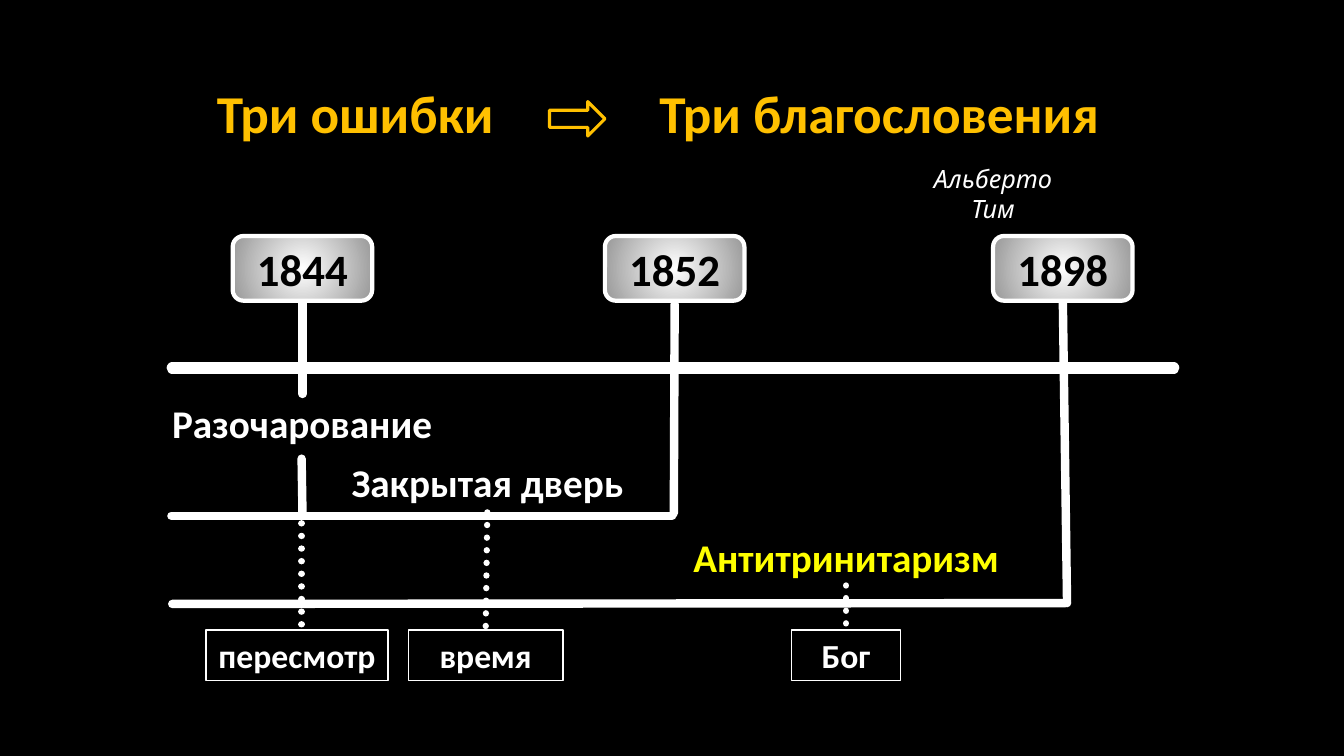
from lxml import etree
from pptx import Presentation
from pptx.dml.color import RGBColor
from pptx.enum.dml import MSO_LINE
from pptx.enum.shapes import MSO_CONNECTOR, MSO_SHAPE
from pptx.enum.text import MSO_ANCHOR, MSO_AUTO_SIZE, PP_ALIGN
from pptx.oxml.ns import qn
from pptx.util import Inches, Pt

CENTER, LEFT = PP_ALIGN.CENTER, PP_ALIGN.LEFT
TOP, MIDDLE = MSO_ANCHOR.TOP, MSO_ANCHOR.MIDDLE
GROW, FIXED = MSO_AUTO_SIZE.SHAPE_TO_FIT_TEXT, MSO_AUTO_SIZE.NONE
STRAIGHT, DOTTED = MSO_CONNECTOR.STRAIGHT, MSO_LINE.ROUND_DOT
RECT, ROUNDED, ARROW = MSO_SHAPE.RECTANGLE, MSO_SHAPE.ROUNDED_RECTANGLE, MSO_SHAPE.RIGHT_ARROW

COLORS = {name: RGBColor.from_string(value) for name, value in {
    "black": "000000", "white": "FFFFFF", "gold": "FFC000",
    "yellow": "FFFF00", "gray": "979797"}.items()}

HEADING = {"name": "Calibri", "size": Pt(38), "bold": True}
BYLINE = {"name": "Noto Sans", "size": Pt(18), "italic": True}
ERROR = {"name": "Calibri", "size": Pt(28), "bold": True}
TOPIC = {"name": "Calibri", "size": Pt(24), "bold": True}
YEAR = {"name": "Calibri", "size": Pt(32), "bold": True}

prs = Presentation()
prs.slide_width, prs.slide_height = Inches(13.33), Inches(7.5)
CELL = prs.slide_height / 90  # the slide is a grid of 160 columns by 90 rows
slide = prs.slides.add_slide(prs.slide_layouts[5])
slide.background.fill.solid()
slide.background.fill.fore_color.rgb = COLORS["black"]
shapes = slide.shapes


def grid(*cells):
    return [round(cell * CELL) for cell in cells]


def write(shape, text, font_format, color, align=CENTER, wrap=False, anchor=TOP, fit=GROW):
    frame = shape.text_frame
    frame.text = text
    frame.word_wrap, frame.vertical_anchor, frame.auto_size = wrap, anchor, fit
    paragraph = frame.paragraphs[0]
    paragraph.alignment = align
    font = paragraph.runs[0].font
    for attribute, value in font_format.items():
        setattr(font, attribute, value)
    font.color.rgb = COLORS[color]


# Heading: errors lead to blessings
errors = shapes.title
errors.left, errors.top, errors.width, errors.height = grid(24.5, 9, 35.6, 8.9)
write(errors, "Три ошибки", HEADING, "gold")

arrow = shapes.add_shape(ARROW, *grid(65.4, 12.1, 6.6, 4.1))
arrow.shadow.inherit = False
arrow.fill.solid()
arrow.fill.fore_color.rgb = COLORS["black"]
arrow.line.color.rgb = COLORS["gold"]
arrow.line.width = Pt(2.25)

blessings = shapes.add_textbox(*grid(77.3, 9, 55.2, 8.9))
write(blessings, "Три благословения", HEADING, "gold", align=LEFT)

byline = shapes.add_textbox(*grid(107.4, 18.8, 21.6, 4.8))
write(byline, "Альберто Тим", BYLINE, "white", wrap=True)

# Names of the three errors
for text, left, top, width, color in [
    ("Разочарование", 16.7, 47, 38.5, "white"),
    ("Закрытая дверь", 40.4, 54, 35.2, "white"),
    ("Антитринитаризм", 81.1, 62.9, 39.2, "yellow"),
]:
    error = shapes.add_textbox(*grid(left, top, width, 6.8))
    write(error, text, ERROR, color)

# Topics along the bottom
for text, left, width in [("пересмотр", 24.5, 21.7), ("время", 48.6, 18.4), ("Бог", 94.2, 13)]:
    topic = shapes.add_shape(RECT, *grid(left, 75, width, 6))
    topic.shadow.inherit = False
    topic.fill.solid()
    topic.fill.fore_color.rgb = COLORS["black"]
    topic.line.color.rgb = COLORS["white"]
    topic.line.width = Pt(1)
    write(topic, text, TOPIC, "white", wrap=True)

# Time axis, year stems, error spans, and dotted links to the topics
for ends, weight, dash in [
    ((20.5, 43.8, 139.7, 43.8), 8, None),
    ((36, 35.8, 36, 46.9), 6, None),
    ((80.3, 36.2, 80.2, 61.1), 6, None),
    ((126.5, 35.8, 127, 71.8), 6, None),
    ((20.5, 71.9, 126.8, 71.8), 6, None),
    ((20.4, 61.4, 80, 61.4), 6, None),
    ((35.9, 54.6, 36, 61.1), 6, None),
    ((35.9, 62.3, 35.9, 75), 4.5, DOTTED),
    ((58, 61, 57.8, 75.4), 4.5, DOTTED),
    ((100.7, 69.7, 100.7, 75.4), 4.5, DOTTED),
]:
    stroke = shapes.add_connector(STRAIGHT, *grid(*ends))
    stroke.line.color.rgb = COLORS["white"]
    stroke.line.width = Pt(weight)
    if dash:
        stroke.line.dash_style = dash
    properties = stroke._element.spPr
    properties.find(qn("a:ln")).set("cap", "rnd")
    etree.SubElement(properties, qn("a:effectLst"))

# Year plates with a radial gradient
for text, left in [("1844", 27.7), ("1852", 72), ("1898", 118.2)]:
    year = shapes.add_shape(ROUNDED, *grid(left, 28.1, 16.6, 7.7))
    year.shadow.inherit = False
    year.fill.gradient()
    for stop, color in zip(year.fill.gradient_stops, ("white", "gray")):
        stop.color.rgb = COLORS[color]
    gradient = year._element.spPr.find(qn("a:gradFill"))
    gradient.remove(gradient.find(qn("a:lin")))
    radial = etree.SubElement(gradient, qn("a:path"), {"path": "circle"})
    etree.SubElement(radial, qn("a:fillToRect"), dict.fromkeys("ltrb", "50000"))
    year.line.color.rgb = COLORS["white"]
    year.line.width = Pt(3)
    write(year, text, YEAR, "black", wrap=True, anchor=MIDDLE, fit=FIXED)

prs.save("out.pptx")
